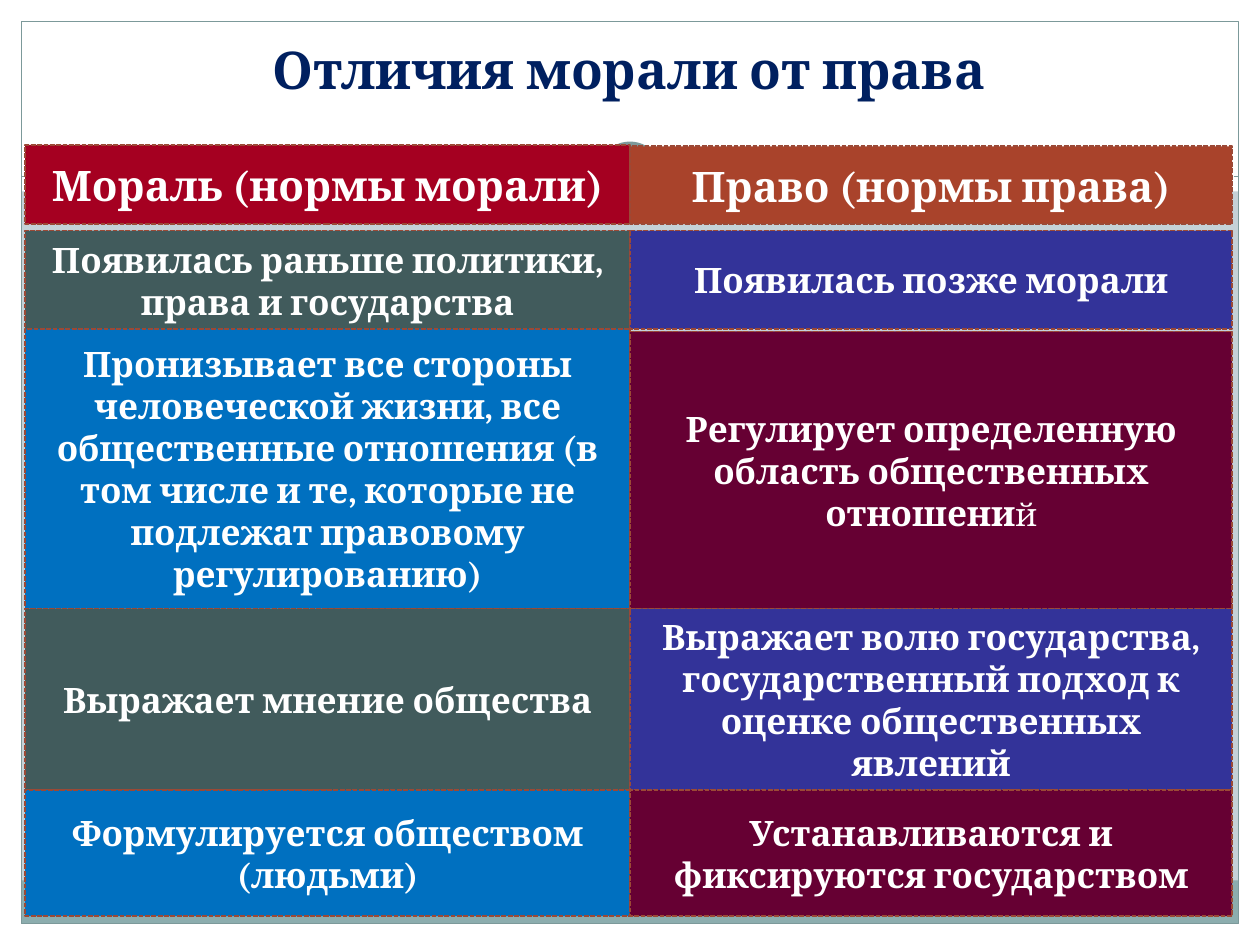
from lxml.etree import SubElement
from pptx import Presentation
from pptx.dml.color import RGBColor
from pptx.enum.dml import MSO_LINE
from pptx.enum.shapes import MSO_CONNECTOR, MSO_SHAPE
from pptx.enum.text import MSO_ANCHOR, PP_ALIGN
from pptx.oxml.ns import qn
from pptx.util import Cm, Pt

FONT = "Cambria"
WHITE, FRAME, CELL_BORDER = "FFFFFF", "7C999A", "9B4936"
SLATE, BLUE, INDIGO, PLUM = "415B5C", "0070C0", "333399", "660033"
WIDTH, HEIGHT, MARGIN = 25.4, 19.05, 0.43

# Left edge and width of the two columns
MORALITY, LAW = (0.51, 12.19), (12.7, 12.14)

# Column, top, height, fill, text size, runs as (text, size, bold)
CELLS = [
    (MORALITY, 2.92, 1.6, "A50021", [("Мораль (нормы морали)", 24, True)]),
    (LAW, 2.95, 1.57, "A9432B", [("Право (нормы права)", 24, True)]),
    (MORALITY, 4.65, 2, SLATE,
     [("Появилась раньше политики, права и государства", 20, True)]),
    (LAW, 4.65, 1.98, INDIGO, [("Появилась позже морали", 20, True)]),
    (MORALITY, 6.63, 5.64, BLUE,
     [("Пронизывает все стороны человеческой жизни, все общественные "
       "отношения (в том числе и те, которые не подлежат правовому "
       "регулированию)", 20, True)]),
    (LAW, 6.68, 5.6, PLUM,
     [("Регулирует определенную область общественных отношени", 20, True),
      ("й", 18, False)]),
    (MORALITY, 12.27, 3.66, SLATE, [("Выражает мнение общества", 20, True)]),
    (LAW, 12.27, 3.66, INDIGO,
     [("Выражает волю государства, государственный подход к оценке "
       "общественных явлений", 20, True)]),
    (MORALITY, 15.93, 2.54, BLUE,
     [("Формулируется обществом (людьми)", 20, True)]),
    (LAW, 15.93, 2.54, PLUM,
     [("Устанавливаются и фиксируются государством", 20, True)]),
]


def color(value):
    return RGBColor.from_string(value)


def style_line(line, value, width, dash=None):
    line.color.rgb = color(value)
    line.width = Pt(width)
    if dash:
        line.dash_style = dash


def add_block(slide, box, fill=None, border=None, kind=MSO_SHAPE.RECTANGLE):
    """Add a flat shape; border is (colour, width[, dash])."""
    block = slide.shapes.add_shape(kind, *map(Cm, box))
    block.shadow.inherit = False
    if fill:
        block.fill.solid()
        block.fill.fore_color.rgb = color(fill)
    else:
        block.fill.background()
    if border:
        style_line(block.line, *border)
    else:
        block.line.fill.background()
    return block


def write_runs(frame, runs, text_color, anchor):
    frame.word_wrap = True
    frame.vertical_anchor = anchor
    paragraph = frame.paragraphs[0]
    paragraph.alignment = PP_ALIGN.CENTER
    for text, size, bold in runs:
        run = paragraph.add_run()
        run.text = text
        run.font.name = FONT
        run.font.size = Pt(size)
        run.font.bold = bold
        run.font.color.rgb = color(text_color)


def add_backdrop(slide):
    slide.background.fill.solid()
    slide.background.fill.fore_color.rgb = color("C5D1D7")
    inner_width, inner_height = WIDTH - 2 * MARGIN, HEIGHT - 2 * MARGIN

    # White margins and header band
    for box in [(0, HEIGHT - MARGIN, WIDTH, MARGIN), (0, 0, WIDTH, 3.86),
                (0, 0, MARGIN, HEIGHT), (WIDTH - MARGIN, 0, MARGIN, HEIGHT)]:
        add_block(slide, box, WHITE)

    # Footer band, frame and divider
    add_block(slide, (MARGIN, 17.75, inner_width, 0.87), "8CADAE")
    add_block(slide, (MARGIN, MARGIN, inner_width, inner_height),
              border=(FRAME, 0.75))
    divider = slide.shapes.add_connector(
        MSO_CONNECTOR.STRAIGHT, Cm(MARGIN), Cm(3.56), Cm(WIDTH - MARGIN), Cm(3.56))
    style_line(divider.line, FRAME, 0.75, MSO_LINE.SQUARE_DOT)
    SubElement(divider.element.spPr, qn("a:effectLst"))

    # Ring centred on the slide
    for diameter, border in [(1.7, None), (1.17, (FRAME, 4))]:
        add_block(slide, ((WIDTH - diameter) / 2, 3.51 - diameter / 2,
                          diameter, diameter), WHITE, border, MSO_SHAPE.OVAL)


def add_title(slide, text):
    title = slide.shapes.title
    title.left, title.top, title.width, title.height = map(
        Cm, (0.84, 0.64, 23.7, 1.5))
    write_runs(title.text_frame, [(text, 29.7, True)], "002060",
               MSO_ANCHOR.BOTTOM)
    # Bring the title in front of the backdrop
    title.element.getparent().append(title.element)


def add_cell(slide, column, top, height, fill, runs):
    left, width = column
    cell = add_block(slide, (left, top, width, height), fill,
                     (CELL_BORDER, 0.9, MSO_LINE.SQUARE_DOT))
    write_runs(cell.text_frame, runs, WHITE, MSO_ANCHOR.MIDDLE)


def main():
    presentation = Presentation()
    presentation.slide_width, presentation.slide_height = Cm(WIDTH), Cm(HEIGHT)
    slide = presentation.slides.add_slide(presentation.slide_layouts[5])
    add_backdrop(slide)
    add_title(slide, "Отличия морали от права")
    for cell in CELLS:
        add_cell(slide, *cell)
    presentation.save("out.pptx")


if __name__ == "__main__":
    main()
